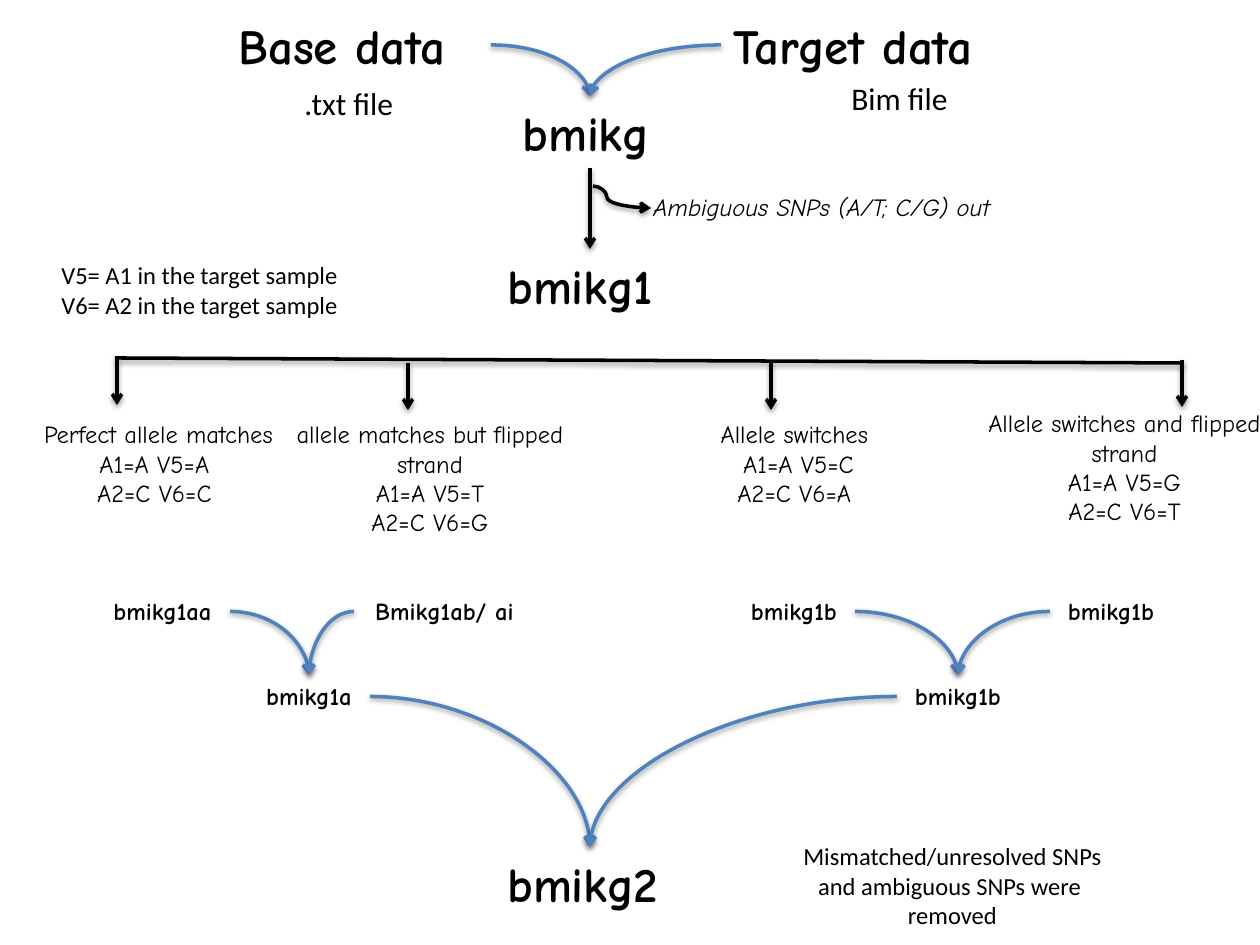
from lxml.etree import SubElement
from pptx import Presentation
from pptx.dml.color import RGBColor
from pptx.enum.shapes import MSO_CONNECTOR
from pptx.enum.text import MSO_AUTO_SIZE, PP_ALIGN
from pptx.oxml import parse_xml
from pptx.oxml.ns import nsdecls, qn
from pptx.util import Emu, Pt

BLACK, BLUE = "000000", "4F81BD"
TOP, BOTTOM, RIGHT = 0, 2, 3  # connection sites

# style: font, size, bold, italic, alignment
STYLES = {
    "title": ("Comic Neue", 28, True, False, PP_ALIGN.LEFT),
    "dataset": ("Comic Neue", 14, True, False, PP_ALIGN.CENTER),
    "case": ("Comic Neue", 14, False, False, PP_ALIGN.CENTER),
    "removed": ("Comic Neue", 14, False, True, PP_ALIGN.LEFT),
    "file": ("Calibri", 18, False, False, PP_ALIGN.LEFT),
    "legend": ("Calibri", 14, False, False, PP_ALIGN.LEFT),
    "remark": ("Calibri", 14, False, False, PP_ALIGN.CENTER),
}

# key: style, (left, top, width, height), wrap, lines
TEXTS = {
    "base": ("title", (226, 9, 265, 72), False, ["Base data"]),
    "target": ("title", (721, 9, 318, 72), False, ["Target data"]),
    "merged": ("title", (510, 96, 160, 72), False, ["bmikg"]),
    "cleaned": ("title", (495, 249, 190, 72), False, ["bmikg1"]),
    "final": ("title", (495, 847, 190, 72), False, ["bmikg2"]),
    "base file": ("file", (292, 78, 116, 50), False, [".txt file"]),
    "target file": ("file", (839, 73, 122, 50), False, ["Bim file"]),
    "ambiguous": ("removed", (641, 186, 403, 43), False,
                  ["Ambiguous SNPs (A/T; C/G) out"]),
    "alleles": ("legend", (49, 254, 305, 72), False,
                ["V5= A1 in the target sample", "V6= A2 in the target sample"]),
    "perfect": ("case", (16, 413, 285, 102), False,
                ["Perfect allele matches", "A1=A V5=A ", "A2=C V6=C "]),
    "flipped": ("case", (275, 413, 310, 131), True,
                ["allele matches but flipped strand", "A1=A V5=T", "A2=C V6=G"]),
    "switched": ("case", (699, 413, 199, 102), False,
                 ["Allele switches ", "A1=A V5=C", "A2=C V6=A "]),
    "switched flipped": ("case", (963, 402, 323, 131), True,
                         ["Allele switches and flipped strand", "A1=A V5=G", "A2=C V6=T"]),
    "set aa": ("dataset", (95, 590, 135, 43), False, ["bmikg1aa"]),
    "set ab": ("dataset", (354, 590, 181, 43), False, ["Bmikg1ab/ ai"]),
    "set b left": ("dataset", (733, 590, 122, 43), False, ["bmikg1b"]),
    "set b right": ("dataset", (1050, 590, 122, 43), False, ["bmikg1b"]),
    "set a": ("dataset", (248, 675, 122, 43), False, ["bmikg1a"]),
    "set b": ("dataset", (897, 675, 122, 43), False, ["bmikg1b"]),
    "mismatched": ("remark", (771, 835, 363, 102), True,
                   ["Mismatched/unresolved SNPs and ambiguous SNPs were ", "removed"]),
}

# left source, right source, result
MERGES = [
    ("base", "target", "merged"),
    ("set aa", "set ab", "set a"),
    ("set b left", "set b right", "set b"),
    ("set a", "set b", "final"),
]
BRANCH_BAR = (115, 358, 1183, 363)
BRANCHES = [(117, 358), (408, 363), (771, 363), (1182, 360)]  # x, top
BRANCH_LENGTH = 47
SIDE_ARROW = (593, 186, 651, 208)


def px(n):
    return Emu(round(n * 914400 / 126))


def rgb(color):
    return RGBColor.from_string(color)


prs = Presentation()
prs.slide_width, prs.slide_height = px(1260), px(945)
s = prs.slides.add_slide(prs.slide_layouts[6])


def add_text(style, box, wrap, lines):
    font, size, bold, italic, align = STYLES[style]
    sp = s.shapes.add_textbox(*map(px, box))
    tf = sp.text_frame
    tf.text = "\n".join(lines)
    tf.word_wrap = wrap
    tf.auto_size = MSO_AUTO_SIZE.SHAPE_TO_FIT_TEXT
    for p in tf.paragraphs:
        p.alignment = align
        p.font.name, p.font.size = font, Pt(size)
        p.font.bold, p.font.italic = bold, italic
        p.font.color.rgb = rgb(BLACK)
    return sp


def add_line(ends=(0, 0, 0, 0), color=BLACK, kind=MSO_CONNECTOR.STRAIGHT, arrow=True):
    c = s.shapes.add_connector(kind, *map(px, ends))
    c.line.color.rgb = rgb(color)
    c.line.width = Pt(2)
    sp_pr = c._element.spPr
    if arrow:
        SubElement(sp_pr.find(qn("a:ln")), qn("a:tailEnd"), type="arrow")
    sp_pr.append(parse_xml(
        f'<a:effectLst {nsdecls("a")}><a:outerShdw blurRad="40000" dist="20000" '
        'dir="5400000" rotWithShape="0"><a:srgbClr val="000000">'
        '<a:alpha val="38000"/></a:srgbClr></a:outerShdw></a:effectLst>'))
    return c


# Texts
shapes = {key: add_text(*item) for key, item in TEXTS.items()}

# Curved arrows joining two data sets into one
for left, right, result in MERGES:
    for source, site in ((left, RIGHT), (right, 1)):
        c = add_line(color=BLUE, kind=MSO_CONNECTOR.CURVE)
        c._element.spPr.find(qn("a:prstGeom")).set("prst", "curvedConnector2")
        c.begin_connect(shapes[source], site)
        c.end_connect(shapes[result], TOP)

# Removal of ambiguous SNPs
c = add_line()
c.begin_connect(shapes["merged"], BOTTOM)
c.end_connect(shapes["cleaned"], TOP)
c = add_line(SIDE_ARROW, kind=MSO_CONNECTOR.CURVE)
guides = c._element.spPr.find(qn("a:prstGeom")).find(qn("a:avLst"))
SubElement(guides, qn("a:gd"), name="adj1", fmla="val 23900")

# Branches to the four allele cases
add_line(BRANCH_BAR, arrow=False)
for x, top in BRANCHES:
    add_line((x, top, x, top + BRANCH_LENGTH))

prs.save("out.pptx")
